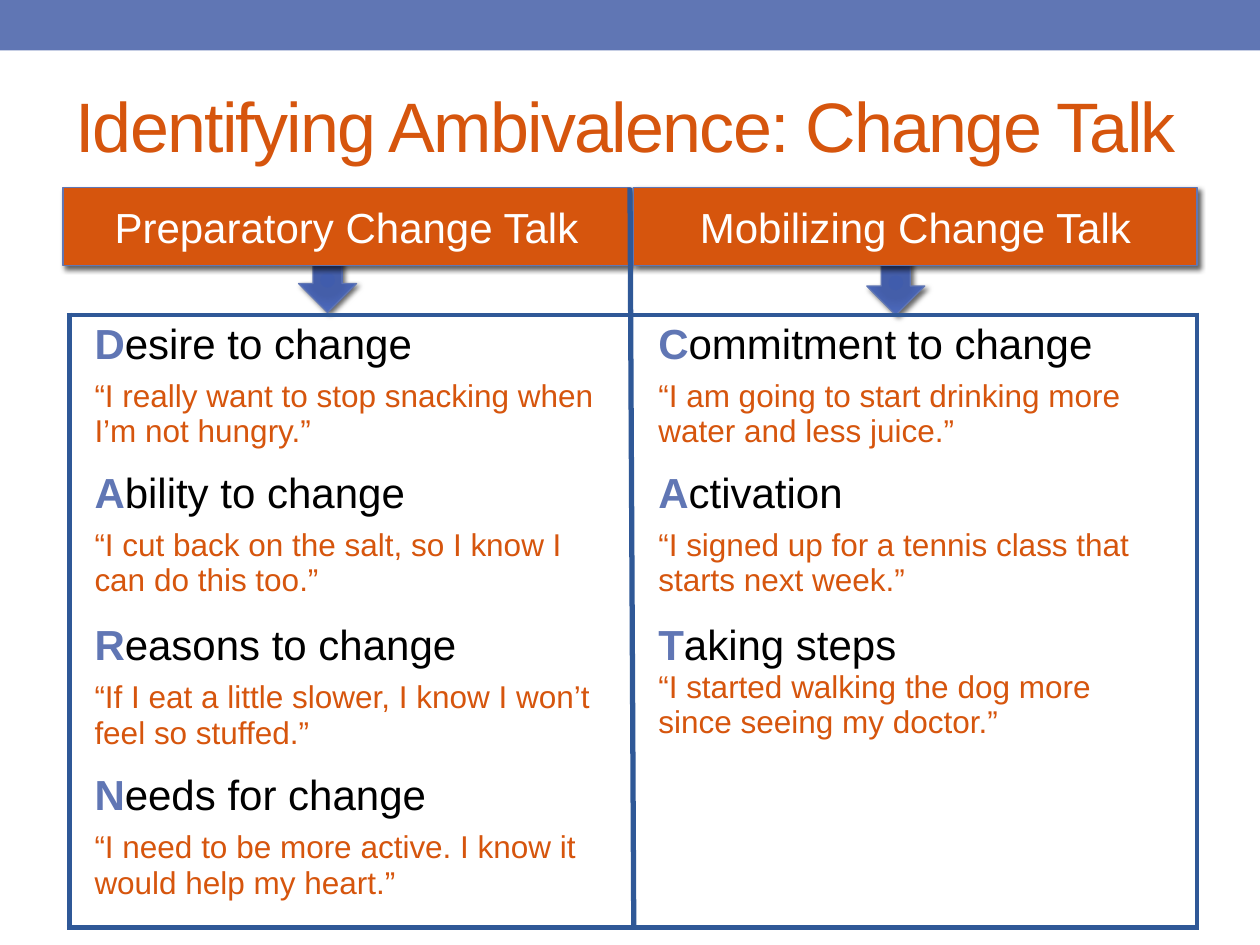
import pptx
import pptx.util
import pptx.dml.color
import pptx.enum.shapes
import pptx.enum.text
import pptx.oxml
import pptx.oxml.ns

SLIDE_W, SLIDE_H = 10, 7.5
FONT = "Arial"
BLUE, ORANGE, NAVY, WHITE, BLACK = "6076B4", "D6550D", "2F5897", "FFFFFF", "000000"
GRADIENT = [(0, "405CAC"), (34, "445EA9"), (70, "4C69BC"), (100, BLUE)]
TITLE = "Identifying Ambivalence: Change Talk"
HEADERS = [
    {"text": "Preparatory Change Talk", "box": (0.5, 1.49, 4.5, 0.62), "arrow": (2.37, 1.97)},
    {"text": "Mobilizing Change Talk", "box": (5.03, 1.49, 4.47, 0.62), "arrow": (6.88, 1.99)},
]
ARROW_SIZE = (0.46, 0.51)
TABLE_BOX = (0.55, 2.5, 8.95, 4.87)
ROW_HEIGHTS = [1.17, 1.21, 1.19, 1.28]
COLUMNS = [
    [
        ("Desire to change", "“I really want to stop snacking when I’m not hungry.”", 6),
        ("Ability to change", "“I cut back on the salt, so I know I can do this too.”", 6),
        ("Reasons to change", "“If I eat a little slower, I know I won’t feel so stuffed.”", 6),
        ("Needs for change", "“I need to be more active. I know it would help my heart.”", 6),
    ],
    [
        ("Commitment to change", "“I am going to start drinking more water and less juice.”", 6),
        ("Activation", "“I signed up for a tennis class that starts next week.”", 6),
        ("Taking steps", "“I started walking the dog more since seeing my doctor.”", 0),
    ],
]
NS = pptx.oxml.ns.nsdecls("a")
SHAPE = pptx.enum.shapes.MSO_SHAPE
MIDDLE = pptx.enum.text.MSO_ANCHOR.MIDDLE


def inches(values):
    return [pptx.util.Inches(v) for v in values]


def rgb(color):
    return pptx.dml.color.RGBColor.from_string(color)


def add_run(p, text, size, color, bold=False):
    r = p.add_run()
    r.text = text
    r.font.name, r.font.size, r.font.bold = FONT, pptx.util.Pt(size), bold
    r.font.color.rgb = rgb(color)
    return r


def add_box(s, kind, box, fill, line=None):
    sp = s.shapes.add_shape(kind, *inches(box))
    sp.shadow.inherit = False
    sp.fill.solid()
    sp.fill.fore_color.rgb = rgb(fill)
    if line:
        sp.line.color.rgb = rgb(line)
        sp.line.width = pptx.util.Pt(0.75)
        sp._element.spPr.find(pptx.oxml.ns.qn("a:effectLst")).append(pptx.oxml.parse_xml(
            f'<a:outerShdw {NS} blurRad="38100" dist="25400" dir="2700000" rotWithShape="0">'
            f'<a:srgbClr val="{BLACK}"><a:alpha val="60000"/></a:srgbClr></a:outerShdw>'))
    else:
        sp.line.fill.background()
    return sp


def add_arrow(s, corner):
    sp = add_box(s, SHAPE.DOWN_ARROW, (*corner, *ARROW_SIZE), BLUE, BLUE)
    stops = "".join(f'<a:gs pos="{pos * 1000}"><a:srgbClr val="{c}"/></a:gs>' for pos, c in GRADIENT)
    solid = sp._element.spPr.find(pptx.oxml.ns.qn("a:solidFill"))
    solid.getparent().replace(solid, pptx.oxml.parse_xml(
        f'<a:gradFill {NS} rotWithShape="1"><a:gsLst>{stops}</a:gsLst><a:path path="circle">'
        '<a:fillToRect l="100000" t="100000" r="100000" b="100000"/></a:path></a:gradFill>'))


def set_borders(cell, outer):
    tcPr = cell._tc.get_or_add_tcPr()
    for side in "LRTB":
        fill = f'<a:solidFill><a:srgbClr val="{NAVY}"/></a:solidFill>' if side in outer else "<a:noFill/>"
        tcPr.append(pptx.oxml.parse_xml(f'<a:ln{side} {NS} w="38100">{fill}</a:ln{side}>'))


def fill_cell(cell, heading, quote, gap):
    tf = cell.text_frame
    p = tf.paragraphs[0]
    p.space_after = pptx.util.Pt(gap)
    add_run(p, heading[0], 24, BLUE, True)
    add_run(p, heading[1:], 24, BLACK)
    add_run(tf.add_paragraph(), quote, 18, ORANGE)


def add_talk_table(s):
    rows, cols = len(ROW_HEIGHTS), len(COLUMNS)
    frame = s.shapes.add_table(rows, cols, *inches(TABLE_BOX))
    table = frame.table
    table.first_row = table.horz_banding = False
    for row, height in zip(table.rows, ROW_HEIGHTS):
        row.height = pptx.util.Inches(height)
    for j, entries in enumerate(COLUMNS):
        for i in range(rows):
            cell = table.cell(i, j)
            edges = {"L": j == 0, "R": j == cols - 1, "T": i == 0, "B": i == rows - 1}
            set_borders(cell, [side for side, on in edges.items() if on])
            cell.fill.background()
            cell.margin_left = cell.margin_right = pptx.util.Inches(0.2)
            if i < len(entries):
                fill_cell(cell, *entries[i])


def add_header(s, text, box):
    sp = add_box(s, SHAPE.RECTANGLE, box, ORANGE, BLUE)
    tf = sp.text_frame
    tf.vertical_anchor = MIDDLE
    p = tf.paragraphs[0]
    p.alignment = pptx.enum.text.PP_ALIGN.CENTER
    add_run(p, text, 24, WHITE)


def main():
    """Build the change talk slide and save it."""
    prs = pptx.Presentation()
    prs.slide_width, prs.slide_height = inches((SLIDE_W, SLIDE_H))
    s = prs.slides.add_slide(prs.slide_layouts[6])
    add_box(s, SHAPE.RECTANGLE, (0, 0, SLIDE_W, 0.4), BLUE)

    tf = s.shapes.add_textbox(*inches((0.5, 0.45, 9, 1.08))).text_frame
    tf.word_wrap, tf.vertical_anchor = True, MIDDLE
    r = add_run(tf.paragraphs[0], TITLE, 40, ORANGE)
    r.font._element.set("spc", "-100")

    for header in HEADERS:
        add_arrow(s, header["arrow"])
    add_header(s, HEADERS[0]["text"], HEADERS[0]["box"])
    add_talk_table(s)
    add_header(s, HEADERS[1]["text"], HEADERS[1]["box"])

    divider = s.shapes.add_connector(
        pptx.enum.shapes.MSO_CONNECTOR.STRAIGHT, *inches((5, 1.49, 5.03, 7.37)))
    divider.line.color.rgb = rgb(NAVY)
    divider.line.width = pptx.util.Pt(3)
    divider._element.spPr.append(pptx.oxml.parse_xml(f"<a:effectLst {NS}/>"))
    prs.save("out.pptx")


if __name__ == "__main__":
    main()
